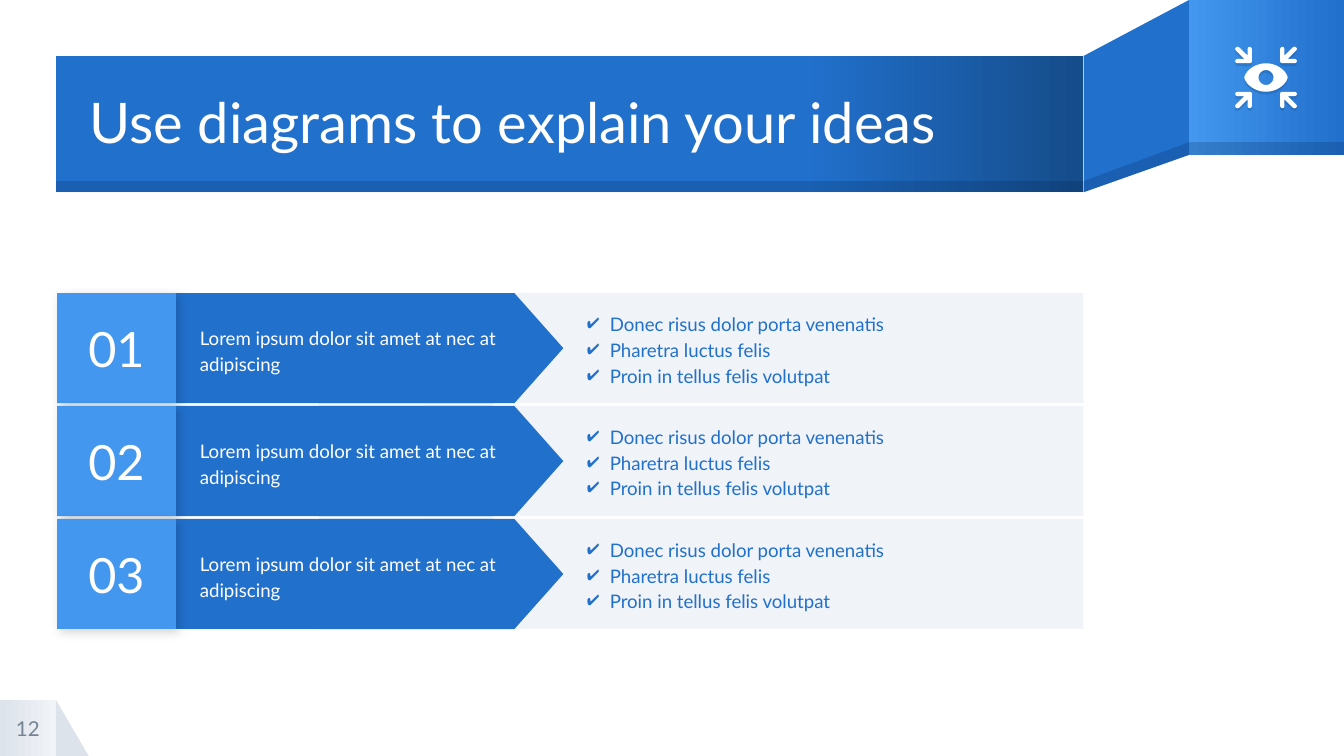
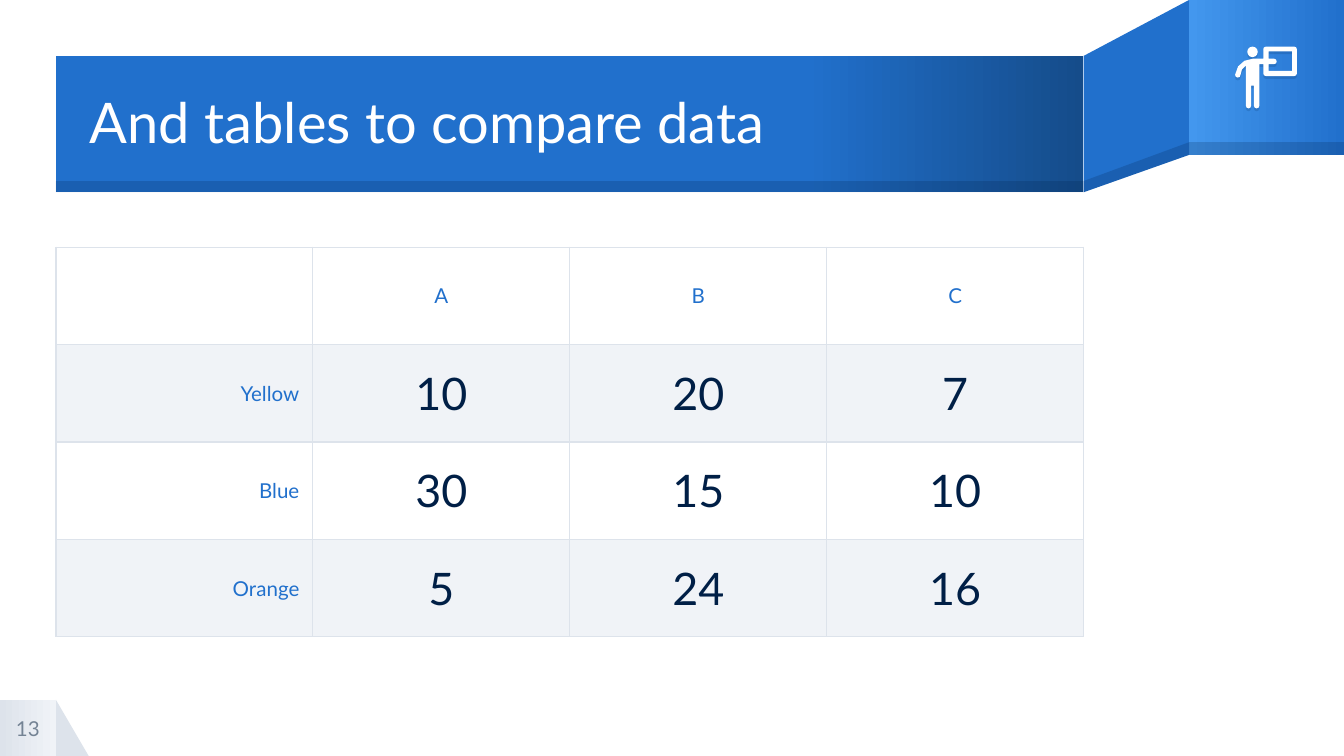
from itertools import product
from math import cos, pi, sin
from typing import NamedTuple

from lxml.etree import SubElement
from pptx import Presentation
from pptx.dml.color import RGBColor
from pptx.enum.shapes import MSO_SHAPE
from pptx.enum.text import MSO_ANCHOR, MSO_AUTO_SIZE, PP_ALIGN
from pptx.oxml.ns import qn
from pptx.util import Pt

BLUE, SKY, DEEP, NAVY = "2170CC", "4397EE", "154C8A", "001F46"
MIST, CLOUD, SLATE, WHITE = "F0F3F7", "DDE3EB", "748394", "FFFFFF"
FONT = "Lato"
ICON_SHADOW = dict(color=NAVY, alpha=15, blur=0, distance=1.5, angle=90)
TILE_SHADOW = dict(color="000000", alpha=17, blur=5.6, distance=2.2, angle=45)


class Box(NamedTuple):
    x: float
    y: float
    w: float
    h: float

    def inner(self, x, y, w, h):
        return Box(self.x + x, self.y + y, w, h)

    def points(self):
        return [Pt(length) for length in self]


FOOTER = Box(0, 375, 30, 30)
BAND = Box(30, 30, 550.5, 73)
CORNER = Box(637, 0, 83, 83)
ICON = CORNER.inner(24.7, 25, 33.1, 33.1)
STEPS = Box(30.6, 157, 549.8, 180)
DATA = Box(30, 132.4, 550.5, 208.8)


def rgb(color):
    return RGBColor.from_string(color)


def apply(target, formats):
    for name, value in formats.items():
        setattr(target, name, value)


def frame_format(side, end):
    return dict(margin_left=Pt(side), margin_right=Pt(side), margin_top=Pt(end),
                margin_bottom=Pt(end), vertical_anchor=MSO_ANCHOR.MIDDLE)


def color_xml(parent, color, alpha=100):
    value = SubElement(parent, qn("a:srgbClr"), val=color)
    if alpha < 100:
        SubElement(value, qn("a:alpha"), val=str(alpha * 1000))


def paint(shape, color, alpha=100, shadow=None):
    shape.shadow.inherit = False
    shape.line.fill.background()
    shape.fill.solid()
    shape.fill.fore_color.rgb = rgb(color)
    properties = shape._element.spPr
    if alpha < 100:
        value = properties.find(qn("a:solidFill")).find(qn("a:srgbClr"))
        SubElement(value, qn("a:alpha"), val=str(alpha * 1000))
    if shadow:
        outer = SubElement(properties.find(qn("a:effectLst")), qn("a:outerShdw"),
                           blurRad=str(Pt(shadow["blur"])), dist=str(Pt(shadow["distance"])),
                           dir=str(shadow["angle"] * 60000), algn="bl", rotWithShape="0")
        color_xml(outer, shadow["color"], shadow["alpha"])
    return shape


def add_block(slide, box, color, kind=MSO_SHAPE.RECTANGLE, **look):
    return paint(slide.shapes.add_shape(kind, *box.points()), color, **look)


def add_gradient(slide, box, stops):
    block = add_block(slide, box, stops[0][1])
    block.fill.gradient()
    block.fill.gradient_angle = 0
    stop_list = block._element.spPr.find(qn("a:gradFill")).find(qn("a:gsLst"))
    for stop in list(stop_list):
        stop_list.remove(stop)
    for position, color in stops:
        color_xml(SubElement(stop_list, qn("a:gs"), pos=str(position * 1000)), color)


def add_outline(slide, box, contours, color, **look):
    builder = None
    for contour in contours:
        start, *rest = [(Pt(box.x + x), Pt(box.y + y)) for x, y in contour]
        if builder:
            builder.move_to(*start)
        else:
            builder = slide.shapes.build_freeform(*start, scale=1.0)
        builder.add_line_segments(rest, close=True)
    return paint(builder.convert_to_shape(), color, **look)


def write(frame, lines, size, color, align=PP_ALIGN.LEFT, spacing=1.0):
    for index, line in enumerate(lines):
        paragraph = frame.add_paragraph() if index else frame.paragraphs[0]
        apply(paragraph, dict(alignment=align, line_spacing=spacing))
        run = paragraph.add_run()
        run.text = line
        apply(run.font, dict(name=FONT, size=Pt(size)))
        run.font.color.rgb = rgb(color)


def add_text(slide, box, lines, size, color, inset=0, **style):
    frame = slide.shapes.add_textbox(*box.points()).text_frame
    apply(frame, dict(word_wrap=True, **frame_format(inset, inset)))
    write(frame, lines, size, color, **style)
    return frame


def add_checks(frame):
    for paragraph in frame.paragraphs:
        properties = paragraph._p.get_or_add_pPr()
        properties.set("marL", str(Pt(25)))
        properties.set("indent", str(Pt(-12.2)))
        color_xml(SubElement(properties, qn("a:buClr")), BLUE)
        SubElement(properties, qn("a:buChar"), char="✔")


def draw_footer(slide, box, number):
    add_block(slide, box.inner(box.w, 0, 17.5, box.h), CLOUD, MSO_SHAPE.RIGHT_TRIANGLE)
    add_gradient(slide, box, [(0, CLOUD), (100, MIST)])
    add_text(slide, box, [str(number)], 11, SLATE, align=PP_ALIGN.CENTER)


def draw_ribbon(slide, band, corner):
    fold_start, fold_end = band.x + band.w, corner.x
    band_end, corner_end = band.y + band.h, corner.y + corner.h
    band_edge, corner_edge = 6, 6.8
    page = Box(0, 0, 0, 0)
    fold = [(fold_end, corner.y), (fold_start, band.y),
            (fold_start, band_end), (fold_end, corner_end)]
    fold_edge = [(fold_end, corner_end - corner_edge), (fold_start, band_end - band_edge),
                 (fold_start, band_end), (fold_end, corner_end)]
    add_outline(slide, page, [fold], BLUE)
    add_gradient(slide, corner, [(0, SKY), (100, BLUE)])
    add_gradient(slide, band, [(0, BLUE), (73, BLUE), (100, DEEP)])
    add_outline(slide, page, [fold_edge], NAVY, alpha=20)
    for part, edge in ((corner, corner_edge), (band, band_edge)):
        add_block(slide, part.inner(0, part.h - edge, part.w, edge), NAVY, alpha=20)


def draw_title(slide, box, wording):
    title = slide.shapes.title
    slide.shapes._spTree.append(title._element)
    apply(title, dict(zip(("left", "top", "width", "height"), box.points())))
    apply(title.text_frame, dict(word_wrap=True, auto_size=MSO_AUTO_SIZE.NONE,
                                 **frame_format(0, 0)))
    write(title.text_frame, [wording], 30, WHITE, spacing=0.9)


def draw_focus_icon(slide, box):
    turns = [step * pi / 24 for step in range(48)]
    center = box.w / 2
    lids = [(center + 11.6 * cos(t), center + 7.6 * sin(t) * abs(sin(t)) ** 0.3) for t in turns]
    pupil = [(center + 4 * cos(t), center + 4 * sin(t)) for t in turns]
    add_outline(slide, box, [lids, pupil], WHITE, shadow=ICON_SHADOW)
    arrow = [(0, 7.8), (0.4, 8.6), (1.2, 8.9), (8, 8.9), (8.7, 8.6), (9, 7.9), (9, 1.2),
             (8.6, 0.4), (7.8, 0.1), (7, 0.4), (6.7, 1.2), (6.7, 4.8), (2.2, 0.4), (1.2, 0),
             (0.4, 0.4), (0, 1.2), (0.4, 2.1), (5, 6.6), (1.2, 6.6), (0.4, 6.9)]
    for right, low in product((False, True), repeat=2):
        corner = [(box.w - x if right else x, box.h - y if low else y) for x, y in arrow]
        add_outline(slide, box, [corner], WHITE, shadow=ICON_SHADOW)


def draw_presenter_icon(slide, box):
    presenter = [(16.6, 0), (15.5, 0.4), (15.1, 1.4), (15.1, 6.5), (9.4, 6.5), (5, 7.6),
                 (1.6, 10.6), (0, 15.1), (0.4, 16.2), (1.4, 16.6), (2.5, 16.2), (2.9, 15.1),
                 (3.7, 12.2), (5.8, 10.1), (5.8, 31.7), (6.2, 32.7), (7.2, 33.1), (8.2, 32.7),
                 (8.6, 31.7), (8.6, 20.9), (10.1, 20.9), (10.1, 31.7), (10.5, 32.7),
                 (11.5, 33.1), (12.6, 32.7), (13, 31.7), (13, 9.4), (15.1, 9.4), (15.1, 14.4),
                 (15.5, 15.4), (16.6, 15.8), (31.7, 15.8), (32.7, 15.4), (33.1, 14.4),
                 (33.1, 1.4), (32.7, 0.4), (31.7, 0)]
    board = [(20.9, 6.5), (18, 6.5), (18, 2.5), (30.6, 2.5), (30.6, 13), (18, 13),
             (18, 9.4), (20.9, 9.4), (21.9, 9), (22.3, 8), (21.9, 6.9)]
    add_block(slide, box.inner(6.5, 0, 5.6, 5.6), WHITE, MSO_SHAPE.OVAL, shadow=ICON_SHADOW)
    add_outline(slide, box, [presenter, board], WHITE, shadow=ICON_SHADOW)


def draw_step(slide, box, number, caption, points):
    tile = box.inner(0, 0, 63.6, box.h)
    add_block(slide, box.inner(197, 0, box.w - 197, box.h), MIST)
    add_block(slide, box.inner(tile.w, 0, 170, box.h), BLUE)
    length, tip = 131, 271.2
    middle = tip - length / 2
    pointer = box.inner(middle - box.h / 2, (box.h - length) / 2, box.h, length)
    add_block(slide, pointer, BLUE, MSO_SHAPE.FLOWCHART_OFFPAGE_CONNECTOR).rotation = 270
    add_text(slide, box.inner(69.4, 7.2, 179.3, 46), [caption], 10, WHITE,
             inset=7.2, spacing=1.15)
    label = add_block(slide, tile, SKY, shadow=TILE_SHADOW).text_frame
    apply(label, frame_format(7.2, 7.2))
    write(label, [number], 26, WHITE, align=PP_ALIGN.CENTER)
    add_checks(add_text(slide, box.inner(264, 0, 274.3, box.h), points, 10, BLUE,
                        inset=7.2, spacing=1.15))


def draw_steps(slide, box, count):
    gap = 1.5
    height = (box.h - gap * (count - 1)) / count
    for index in range(count):
        draw_step(slide, box.inner(0, index * (height + gap), box.w, height), f"{index + 1:02}",
                  "Lorem ipsum dolor sit amet at nec at adipiscing",
                  ["Donec risus dolor porta venenatis", "Pharetra luctus felis",
                   "Proin in tellus felis volutpat"])


def draw_data(slide, box, rows):
    table = slide.shapes.add_table(len(rows), len(rows[0]), *box.points()).table
    apply(table, dict(first_row=False, horz_banding=False))
    for column in table.columns:
        column.width = Pt(box.w / len(rows[0]))
    for row_index, values in enumerate(rows):
        table.rows[row_index].height = Pt(box.h / len(rows))
        for column_index, value in enumerate(values):
            cell = table.cell(row_index, column_index)
            apply(cell, frame_format(7.2, 5))
            for side in ("a:lnL", "a:lnR", "a:lnT", "a:lnB"):
                border = SubElement(cell._tc.get_or_add_tcPr(), qn(side), w=str(Pt(0.75)))
                color_xml(SubElement(border, qn("a:solidFill")), CLOUD)
            if row_index % 2:
                cell.fill.solid()
                cell.fill.fore_color.rgb = rgb(MIST)
            else:
                cell.fill.background()
            if value:
                heading = row_index == 0 or column_index == 0
                size, color = (11, BLUE) if heading else (24, NAVY)
                align = PP_ALIGN.CENTER if column_index else PP_ALIGN.RIGHT
                write(cell.text_frame, [value], size, color, align)


def start_slide(deck, number, wording):
    slide = deck.slides.add_slide(deck.slide_layouts[5])
    draw_footer(slide, FOOTER, number)
    draw_ribbon(slide, BAND, CORNER)
    draw_title(slide, BAND.inner(18.2, 0.8, 532, 72.6), wording)
    return slide


def main():
    deck = Presentation()
    apply(deck, dict(slide_width=Pt(720), slide_height=Pt(405)))

    diagram = start_slide(deck, 12, "Use diagrams to explain your ideas")
    draw_focus_icon(diagram, ICON)
    draw_steps(diagram, STEPS, 3)

    comparison = start_slide(deck, 13, "And tables to compare data")
    draw_presenter_icon(comparison, ICON)
    draw_data(comparison, DATA, [["", "A", "B", "C"],
                                 ["Yellow", "10", "20", "7"],
                                 ["Blue", "30", "15", "10"],
                                 ["Orange", "5", "24", "16"]])
    deck.save("out.pptx")


if __name__ == "__main__":
    main()
